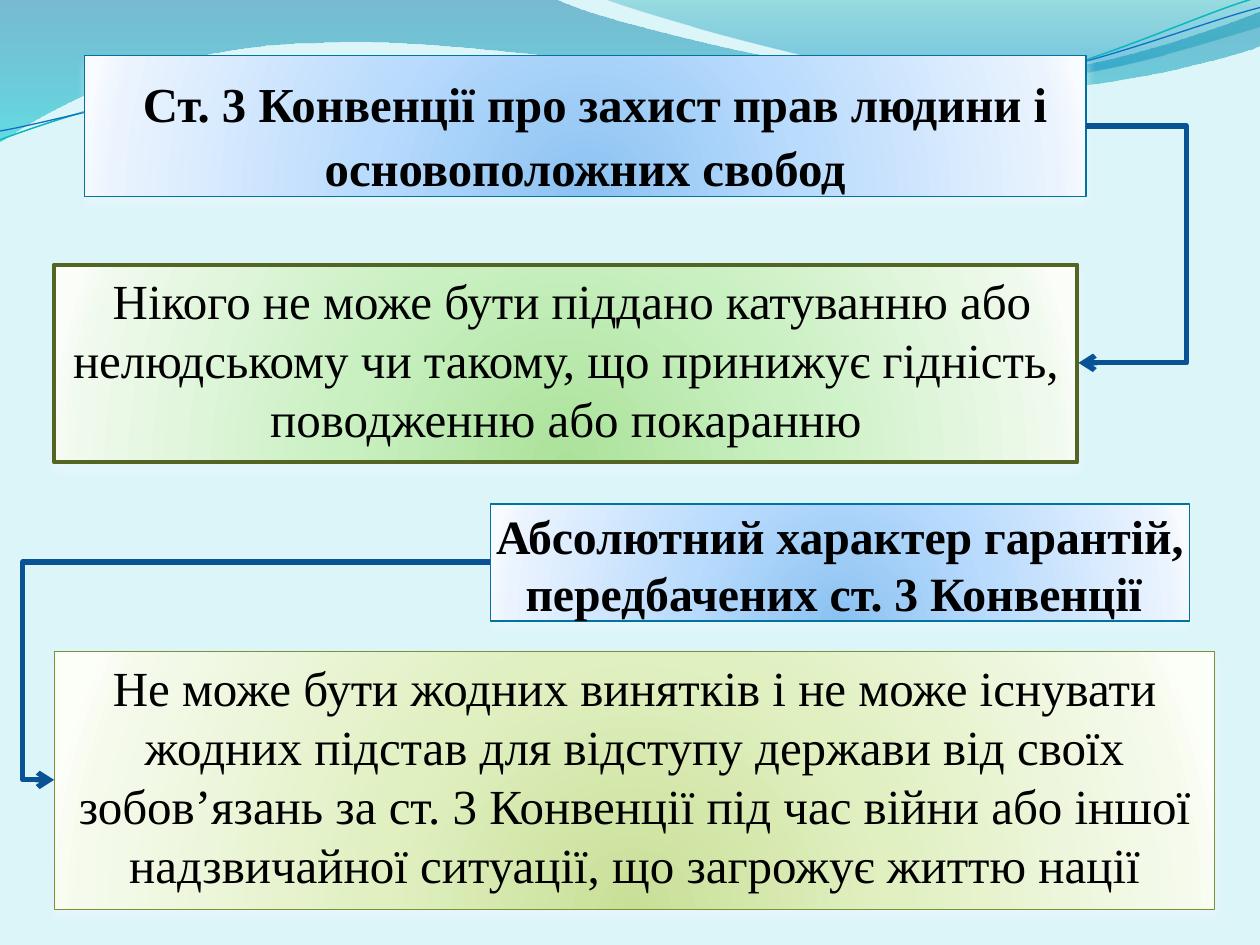
import dataclasses

import pptx
import pptx.dml.color
import pptx.enum.shapes
import pptx.enum.text
import pptx.oxml
import pptx.oxml.ns
import pptx.util

Inches = pptx.util.Inches
Pt = pptx.util.Pt
qn = pptx.oxml.ns.qn
MIDDLE = pptx.enum.text.PP_ALIGN.CENTER
TOP = pptx.enum.text.MSO_ANCHOR.TOP
BOTTOM = pptx.enum.text.MSO_ANCHOR.BOTTOM
RADIAL = ('<a:path path="circle"><a:fillToRect l="50000" t="130000" '
          'r="50000" b="-30000"/></a:path>')
DOWNWARD = '<a:lin ang="5400000" scaled="0"/>'


@dataclasses.dataclass(frozen=True)
class Panel:
    stops: tuple
    outline: str
    outline_width: float


@dataclasses.dataclass(frozen=True)
class Theme:
    font: str = "Times New Roman"
    background: str = "DBF5F9"
    text: str = "000000"
    glow: str = "F4FAFF"
    arrow: str = "095295"
    arrow_width: float = 3
    title_lead_size: float = 45
    title_size: float = 27.9
    heading_size: float = 27.3
    body_size: float = 28
    blue: Panel = Panel(("8BC2F1", "B9DBFD", "EAF3FE", "F8FBFF"), "0074A1", 0.75)
    green: Panel = Panel(("ABE29A", "C9F0C1", "EFF9EC", "FAFDF8"), "546422", 2.25)
    olive: Panel = Panel(("C9DF97", "E0F0C1", "F5FAEC", "FCFEF8"), "7B9135", 0.75)


THEME = Theme()

BACK_WAVE = [[(0, -0.01)], [(4.4, -0.01)],
             [(4.76, 0.17), (6.64, 0.63), (7.58, 0.63)],
             [(8.53, 0.63), (9.58, 0.26), (10, 0.09)], [(10.01, 0.36)],
             [(9.83, 0.44), (8.7, 0.76), (7.46, 0.75)],
             [(6.22, 0.75), (3.82, 0.28), (2.57, 0.34)],
             [(1.29, 0.35), (0.46, 0.83), (-0.01, 1.13)]]
FRONT_WAVE = [[(4.79, -0.01)], [(5.09, 0.11), (6.82, 0.62), (7.69, 0.65)],
              [(8.56, 0.69), (9.61, 0.32), (10, 0.21)], [(10, 0)]]
TEAL_LINE = [[(0, 1.11)], [(0.48, 0.93), (1.58, 0.57), (2.77, 0.52)],
             [(3.95, 0.47), (5.93, 0.89), (7.13, 0.8)],
             [(8.33, 0.71), (9.38, 0.15), (9.98, -0.02)]]
BLUE_LINE = [[(0, 1.04)], [(0.47, 0.96), (1.64, 0.61), (2.83, 0.56)],
             [(4.03, 0.51), (5.97, 0.83), (7.17, 0.75)],
             [(8.36, 0.67), (9.41, 0.21), (10, 0.06)]]


def rgb(value):
    return pptx.dml.color.RGBColor.from_string(value)


def xml(tag, inner="", attributes=""):
    return pptx.oxml.parse_xml(
        f'<a:{tag} {pptx.oxml.ns.nsdecls("a")} {attributes}>{inner}</a:{tag}>')


def set_line(line, color, width):
    line.color.rgb = rgb(color)
    line.width = Pt(width)


def set_gradient(shape, stops, direction):
    stop_list = "".join(
        f'<a:gs pos="{position * 1000}"><a:srgbClr val="{color}">'
        f'<a:alpha val="{opacity * 1000}"/></a:srgbClr></a:gs>'
        for position, color, opacity in stops)
    shape.fill.background()
    properties = shape._element.spPr
    properties.replace(properties.find(qn("a:noFill")),
                       xml("gradFill", f"<a:gsLst>{stop_list}</a:gsLst>{direction}",
                           'rotWithShape="1"'))


def add_curve(slide, curve, close):
    anchors = [(Inches(x), Inches(y)) for x, y in (segment[-1] for segment in curve)]
    builder = slide.shapes.build_freeform(*anchors[0])
    builder.add_line_segments(anchors[1:], close=close)
    shape = builder.convert_to_shape()
    shape.shadow.inherit = False
    straight_parts = list(shape._element.spPr.iter(qn("a:lnTo")))
    for straight, segment in zip(straight_parts, curve[1:]):
        if len(segment) == 3:
            points = "".join(f'<a:pt x="{Inches(x) - shape.left}" y="{Inches(y) - shape.top}"/>'
                             for x, y in segment)
            straight.getparent().replace(straight, xml("cubicBezTo", points))
    return shape


def add_wave(slide, curve, stops):
    wave = add_curve(slide, curve, True)
    set_gradient(wave, stops, DOWNWARD)
    wave.line.fill.background()


def add_wave_line(slide, curve, color, width):
    wave_line = add_curve(slide, curve, False)
    wave_line.fill.background()
    set_line(wave_line.line, color, width)


def add_box(slide, left, top, width, height):
    return slide.shapes.add_shape(pptx.enum.shapes.MSO_SHAPE.RECTANGLE, Inches(left),
                                  Inches(top), Inches(width), Inches(height))


def style_panel(shape, panel):
    set_gradient(shape, [(position, color, 100) for position, color
                         in zip((0, 43, 93, 100), panel.stops)], RADIAL)
    set_line(shape.line, panel.outline, panel.outline_width)
    shape.shadow.inherit = False
    effects = shape._element.spPr.find(qn("a:effectLst"))
    effects.append(xml("outerShdw",
                       f'<a:srgbClr val="{THEME.glow}"><a:alpha val="48000"/></a:srgbClr>',
                       f'blurRad="{Pt(4.5)}" dist="{Pt(3)}" dir="5400000" rotWithShape="0"'))


def write_text(shape, text, size, heading):
    frame = shape.text_frame
    frame.auto_size = pptx.enum.text.MSO_AUTO_SIZE.NONE
    frame.word_wrap = True
    frame.vertical_anchor = BOTTOM if heading else TOP
    if heading:
        frame.margin_left = frame.margin_right = frame.margin_bottom = 0
        frame.margin_top = Inches(0.05)
    paragraph = frame.paragraphs[0]
    paragraph.text = text
    paragraph.alignment = MIDDLE
    paragraph.space_before = Pt(0 if heading else size * 0.2)
    font = paragraph.font
    font.name, font.size, font.bold = THEME.font, Pt(size), heading
    font.color.rgb = rgb(THEME.text)
    return paragraph


def add_title(slide, text):
    title = slide.shapes.title
    slide.shapes._spTree.append(title._element)
    title.left, title.top, title.width, title.height = map(Inches, (0.67, 0.44, 7.95, 1.12))
    style_panel(title, THEME.blue)
    paragraph = write_text(title, " ", THEME.title_lead_size, True)
    article = paragraph.add_run()
    article.text = text
    article.font.size = Pt(THEME.title_size)


def add_elbow_arrow(slide, start, end, bend_x):
    arrow = slide.shapes.add_connector(pptx.enum.shapes.MSO_CONNECTOR.ELBOW,
                                       *map(Inches, (*start, *end)))
    set_line(arrow.line, THEME.arrow, THEME.arrow_width)
    arrow.line._get_or_add_ln().append(xml("tailEnd", attributes='type="arrow"'))
    properties = arrow._element.spPr
    properties.append(xml("effectLst"))
    bend = round((bend_x - start[0]) / (end[0] - start[0]) * 100000)
    geometry = properties.find(qn("a:prstGeom"))
    for adjustments in list(geometry):
        geometry.remove(adjustments)
    geometry.append(xml("avLst", f'<a:gd name="adj1" fmla="val {bend}"/>'))


def main():
    deck = pptx.Presentation()
    deck.slide_width, deck.slide_height = Inches(10), Inches(7.5)
    slide = deck.slides.add_slide(deck.slide_layouts[5])
    slide.background.fill.solid()
    slide.background.fill.fore_color.rgb = rgb(THEME.background)

    add_wave(slide, BACK_WAVE, [(0, "0074A1", 45), (100, "00C6CF", 55)])
    add_wave(slide, FRONT_WAVE, [(0, "00A1A9", 30), (80, "008BBF", 45)])
    add_wave_line(slide, TEAL_LINE, "0AB8BF", 0.85)
    add_wave_line(slide, BLUE_LINE, "0F6FC6", 0.75)

    add_title(slide, "Ст. 3 Конвенції про захист прав людини і основоположних свобод")

    prohibition = add_box(slide, 0.43, 2.1, 8.12, 1.57)
    style_panel(prohibition, THEME.green)
    write_text(prohibition, " Нікого не може бути піддано катуванню або нелюдському чи такому, "
               "що принижує гідність, поводженню або покаранню", THEME.body_size, False)
    add_elbow_arrow(slide, (8.62, 1), (8.56, 2.88), 9.42)

    guarantees = add_box(slide, 3.89, 4, 5.55, 0.93)
    style_panel(guarantees, THEME.blue)
    write_text(guarantees, "Абсолютний характер гарантій, передбачених ст. 3 Конвенції ",
               THEME.heading_size, True)

    exceptions = add_box(slide, 0.43, 5.17, 9.21, 2.05)
    style_panel(exceptions, THEME.olive)
    write_text(exceptions, "Не може бути жодних винятків і не може існувати жодних підстав для "
               "відступу держави від своїх зобов’язань за ст. 3 Конвенції під час війни або "
               "іншої надзвичайної ситуації, що загрожує життю нації", THEME.body_size, False)
    add_elbow_arrow(slide, (3.89, 4.46), (0.43, 6.19), 0.18)

    deck.save("out.pptx")


if __name__ == "__main__":
    main()
